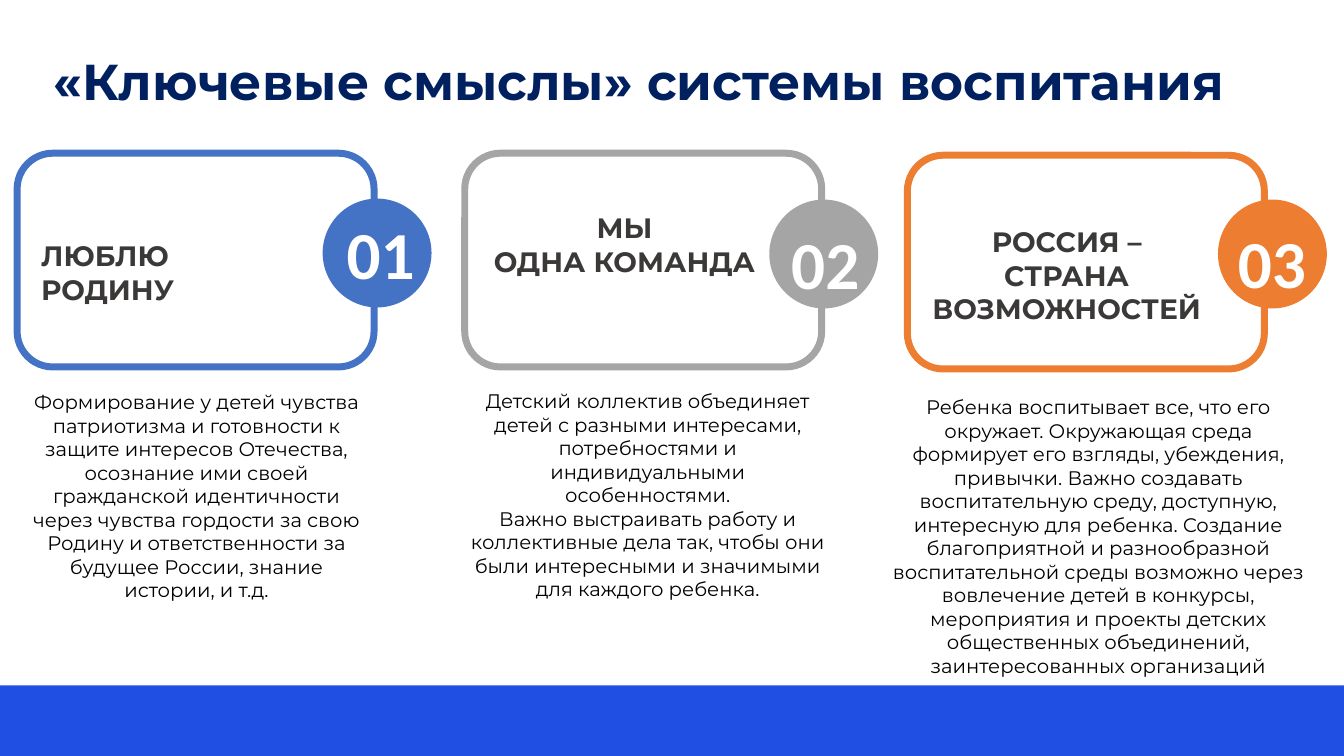
import pptx
import pptx.util
import pptx.dml.color
import pptx.enum.shapes
import pptx.enum.text

Inches = pptx.util.Inches
RGB = pptx.dml.color.RGBColor
SHAPE = pptx.enum.shapes.MSO_SHAPE
ALIGN = pptx.enum.text.PP_ALIGN
ANCHOR = pptx.enum.text.MSO_ANCHOR

BLUE = RGB(0x44, 0x72, 0xC4)
GRAY = RGB(0xA5, 0xA5, 0xA5)
ORANGE = RGB(0xED, 0x7D, 0x31)
NAVY = RGB(0x00, 0x20, 0x60)
CHARCOAL = RGB(0x3B, 0x38, 0x38)
BLACK = RGB(0, 0, 0)
WHITE = RGB(0xFF, 0xFF, 0xFF)
FOOTER_BLUE = RGB(0x20, 0x4F, 0xE3)

CARD_W, CARD_H, BADGE = 3.54, 2.12, 1.08

# Boxes are left, top, width, height in inches, relative to the card's corner.
CARDS = [
    dict(at=(0.17, 1.52), color=BLUE, number="01",
         badge_at=(3.03, 0.45), number_at=(3.16, 0.54),
         heading=["ЛЮБЛЮ РОДИНУ"], heading_box=(0.14, 0.8, 2.62, 0.77),
         heading_format=dict(align=ALIGN.LEFT),
         body=["Формирование у детей чувства патриотизма и готовности к защите "
               "интересов Отечества, осознание ими своей гражданской идентичности "
               "через чувства гордости за свою Родину и ответственности за будущее "
               "России, знание истории, и т.д."],
         body_box=(0.01, 2.3, 3.54, 1.99)),
    dict(at=(4.61, 1.52), color=GRAY, number="02",
         badge_at=(3.02, 0.46), number_at=(3.13, 0.64),
         heading=["МЫ", "ОДНА КОМАНДА"], heading_box=(0.17, 0.52, 2.83, 0.77),
         heading_format=dict(wrap=False),
         body=["Детский коллектив объединяет детей с разными интересами,",
               "потребностями и индивидуальными особенностями.",
               "Важно выстраивать работу и коллективные дела так, чтобы они были "
               "интересными и значимыми для каждого ребенка."],
         body_box=(-0.06, 2.29, 3.75, 2.22)),
    dict(at=(9, 1.54), color=ORANGE, number="03",
         badge_at=(3.08, 0.44), number_at=(3.17, 0.61),
         heading=["РОССИЯ – СТРАНА", "ВОЗМОЖНОСТЕЙ"],
         heading_box=(0.08, 0.64, 3, 0.77), heading_format=dict(wrap=False),
         body=["Ребенка воспитывает все, что его окружает. Окружающая среда "
               "формирует его взгляды, убеждения, привычки. Важно создавать "
               "воспитательную среду, доступную, интересную для ребенка. Создание "
               "благоприятной и разнообразной воспитательной среды возможно через "
               "вовлечение детей в конкурсы, мероприятия и проекты детских "
               "общественных объединений, заинтересованных организаций"],
         body_box=(-0.27, 2.33, 4.33, 2.93)),
]


def add_text(s, paragraphs, box, *, size, color, font="Montserrat", bold=False,
             align=ALIGN.CENTER, anchor=ANCHOR.TOP, wrap=True, spacing=None):
    tf = s.shapes.add_textbox(*map(Inches, box)).text_frame
    tf.word_wrap = wrap
    tf.vertical_anchor = anchor
    for i, text in enumerate(paragraphs):
        p = tf.add_paragraph() if i else tf.paragraphs[0]
        p.alignment = align
        if spacing:
            p.line_spacing = spacing
        r = p.add_run()
        r.text = text
        r.font.name = font
        r.font.size = pptx.util.Pt(size)
        r.font.bold = bold
        r.font.color.rgb = color


def add_shape(s, kind, box, *, fill=None, line=None):
    sp = s.shapes.add_shape(kind, *map(Inches, box))
    sp.shadow.inherit = False
    if fill is None:
        sp.fill.background()
    else:
        sp.fill.solid()
        sp.fill.fore_color.rgb = fill
    if line is None:
        sp.line.fill.background()
    else:
        sp.line.color.rgb = line
        sp.line.width = pptx.util.Pt(5)


def add_card(s, card):
    """Draws a framed heading with a numbered badge and the text below it."""
    left, top = card["at"]

    def place(x, y, w, h):
        return left + x, top + y, w, h

    add_shape(s, SHAPE.ROUNDED_RECTANGLE, place(0, 0, CARD_W, CARD_H),
              line=card["color"])
    add_shape(s, SHAPE.OVAL, place(*card["badge_at"], BADGE, BADGE),
              fill=card["color"])
    add_text(s, [card["number"]], place(*card["number_at"], 0.89, 0.91),
             size=48, color=WHITE, font="Calibri", bold=True, wrap=False)
    add_text(s, card["heading"], place(*card["heading_box"]), size=20,
             color=CHARCOAL, bold=True, **card["heading_format"])
    add_text(s, card["body"], place(*card["body_box"]), size=14, color=BLACK)


def add_title(s, box):
    add_text(s, ["«Ключевые смыслы» системы воспитания"], box, size=36,
             color=NAVY, bold=True, anchor=ANCHOR.MIDDLE, spacing=0.9)


def add_footer(s, box):
    add_shape(s, SHAPE.RECTANGLE, box, fill=FOOTER_BLUE)


def main():
    prs = pptx.Presentation()
    prs.slide_width, prs.slide_height = Inches(13.33), Inches(7.5)
    s = prs.slides.add_slide(prs.slide_layouts[6])
    add_title(s, (0.16, 0.34, 12.35, 0.99))
    for card in CARDS:
        add_card(s, card)
    add_footer(s, (0, 6.8, 13.33, 0.7))
    prs.save("out.pptx")


if __name__ == "__main__":
    main()
